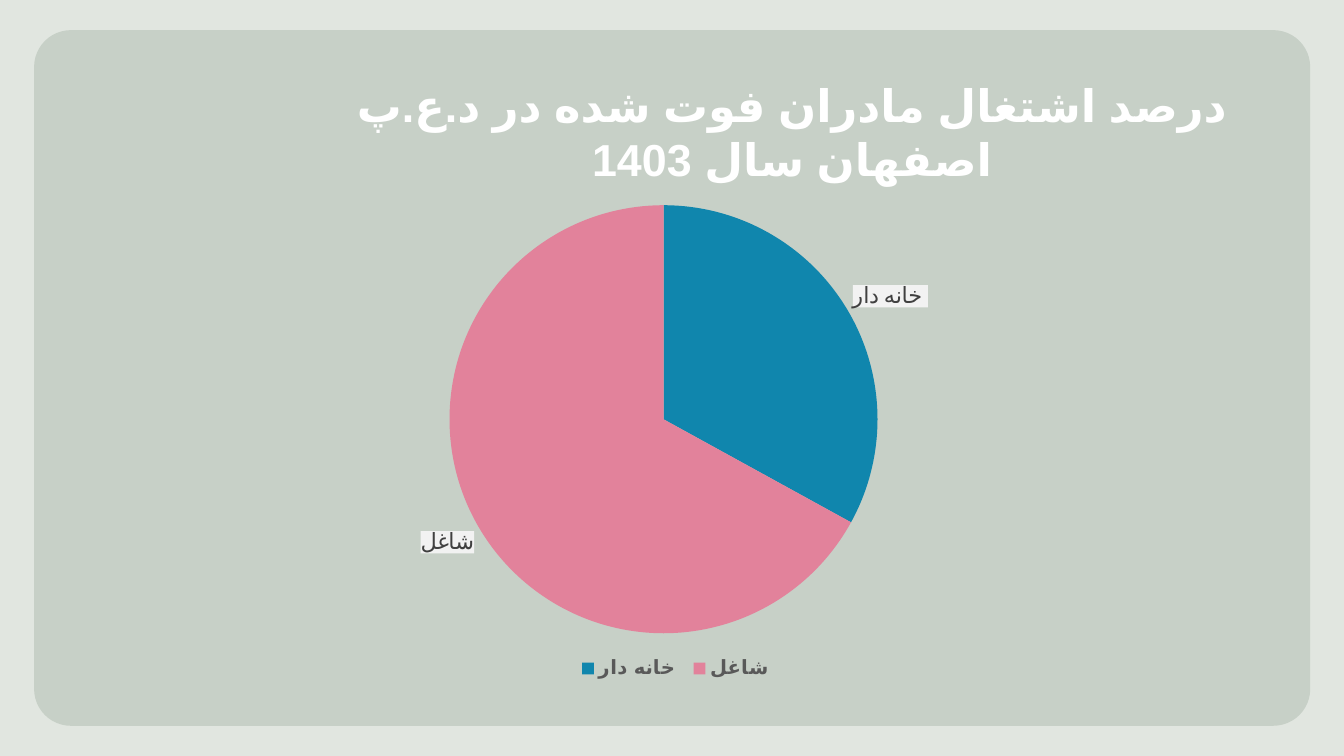
from lxml import etree
from pptx import Presentation
from pptx.chart.data import CategoryChartData
from pptx.dml.color import RGBColor
from pptx.enum.chart import XL_CHART_TYPE as ChartType
from pptx.enum.chart import XL_LABEL_POSITION as LabelPosition
from pptx.enum.chart import XL_LEGEND_POSITION as LegendPosition
from pptx.enum.shapes import MSO_SHAPE as Shape
from pptx.enum.text import MSO_ANCHOR as Anchor
from pptx.enum.text import MSO_AUTO_SIZE as AutoSize
from pptx.enum.text import PP_ALIGN as Align
from pptx.oxml import parse_xml
from pptx.oxml.ns import qn
from pptx.util import Cm, Pt

CHART_NS = "http://schemas.openxmlformats.org/drawingml/2006/chart"
DRAWING_NS = "http://schemas.openxmlformats.org/drawingml/2006/main"
SLICES = [("خانه دار ", 33, "1086AD"), ("شاغل", 67, "E2829B")]


def paint(fill, color):
    fill.solid()
    fill.fore_color.rgb = RGBColor.from_string(color)


def set_font(font, color, **values):
    for name, value in values.items():
        setattr(font, name, value)
    font.color.rgb = RGBColor.from_string(color)


def add_panel(page, box):
    paint(page.background.fill, "E1E6E0")
    panel = page.shapes.add_shape(Shape.ROUNDED_RECTANGLE, *box)
    panel.adjustments[0] = 0.053
    panel.shadow.inherit = False
    paint(panel.fill, "C7D0C7")
    panel.line.fill.background()
    # The panel lies behind the title placeholder.
    page.shapes._spTree.insert(2, panel._element)


def place_title(page, box):
    title = page.shapes.title
    title.left, title.top, title.width, title.height = box
    frame = title.text_frame
    frame.auto_size, frame.word_wrap = AutoSize.NONE, True
    frame.vertical_anchor = Anchor.TOP
    para = frame.paragraphs[0]
    para.alignment = Align.CENTER
    para._p.get_or_add_pPr().set("rtl", "1")
    span = para.add_run()
    span.text = "درصد اشتغال مادران فوت شده در د.ع.پ اصفهان سال 1403"
    set_font(span.font, "FFFFFF", name="Times New Roman", size=Pt(32), bold=True)
    # Persian letters take the complex-script typeface.
    properties = span._r.get_or_add_rPr()
    properties.set("lang", "fa-IR")
    etree.SubElement(properties, qn("a:cs")).set("typeface", "Arial")


def place_plot(chart, **fractions):
    """Fix the inner plot area as fractions of the chart."""
    plot_area = chart._chartSpace.chart.plotArea
    for old in plot_area.findall(qn("c:layout")):
        plot_area.remove(old)
    modes = {"layoutTarget": "inner", "xMode": "edge", "yMode": "edge"}
    parts = "".join(f'<c:{name} val="{value}"/>'
                    for name, value in {**modes, **fractions}.items())
    plot_area.insert(0, parse_xml(
        f'<c:layout xmlns:c="{CHART_NS}"><c:manualLayout>{parts}'
        '</c:manualLayout></c:layout>'))


def fill_labels(labels, color):
    """Give the data labels a plain background."""
    properties = etree.fromstring(
        f'<c:spPr xmlns:c="{CHART_NS}" xmlns:a="{DRAWING_NS}"><a:solidFill>'
        f'<a:srgbClr val="{color}"/></a:solidFill></c:spPr>')
    labels._element.find(qn("c:txPr")).addprevious(properties)


def add_pie(page, box):
    data = CategoryChartData()
    data.categories = [name for name, _, _ in SLICES]
    data.add_series("Series 1", [value for _, value, _ in SLICES])
    chart = page.shapes.add_chart(ChartType.PIE, *box, data).chart
    set_font(chart.font, "000000", name="Karla", size=Pt(10))
    chart.has_title = False
    place_plot(chart, x=0.3, y=0.03, w=0.38, h=0.87)

    chart.has_legend = True
    chart.legend.position = LegendPosition.BOTTOM
    chart.legend.include_in_layout = False
    set_font(chart.legend.font, "595959", name="Karla", size=Pt(14), bold=True)

    plot = chart.plots[0]
    plot.vary_by_categories = True
    series = plot.series[0]
    for index, (_, _, color) in enumerate(SLICES):
        paint(series.points[index].format.fill, color)

    labels = series.data_labels
    labels.show_category_name, labels.show_value = True, False
    labels.show_percentage = False
    labels.position = LabelPosition.OUTSIDE_END
    set_font(labels.font, "404040", name="Karla", size=Pt(16))
    fill_labels(labels, "F2F2F2")


def main():
    deck = Presentation()
    deck.slide_width, deck.slide_height = Cm(33.87), Cm(19.05)
    page = deck.slides.add_slide(deck.slide_layouts[5])
    add_panel(page, (Cm(0.86), Cm(0.76), Cm(32.16), Cm(17.53)))
    place_title(page, (Cm(7), Cm(1.83), Cm(25.93), Cm(1.63)))
    add_pie(page, (Cm(2.12), Cm(4.8), Cm(29.8), Cm(12.4)))
    deck.save("out.pptx")


if __name__ == "__main__":
    main()
